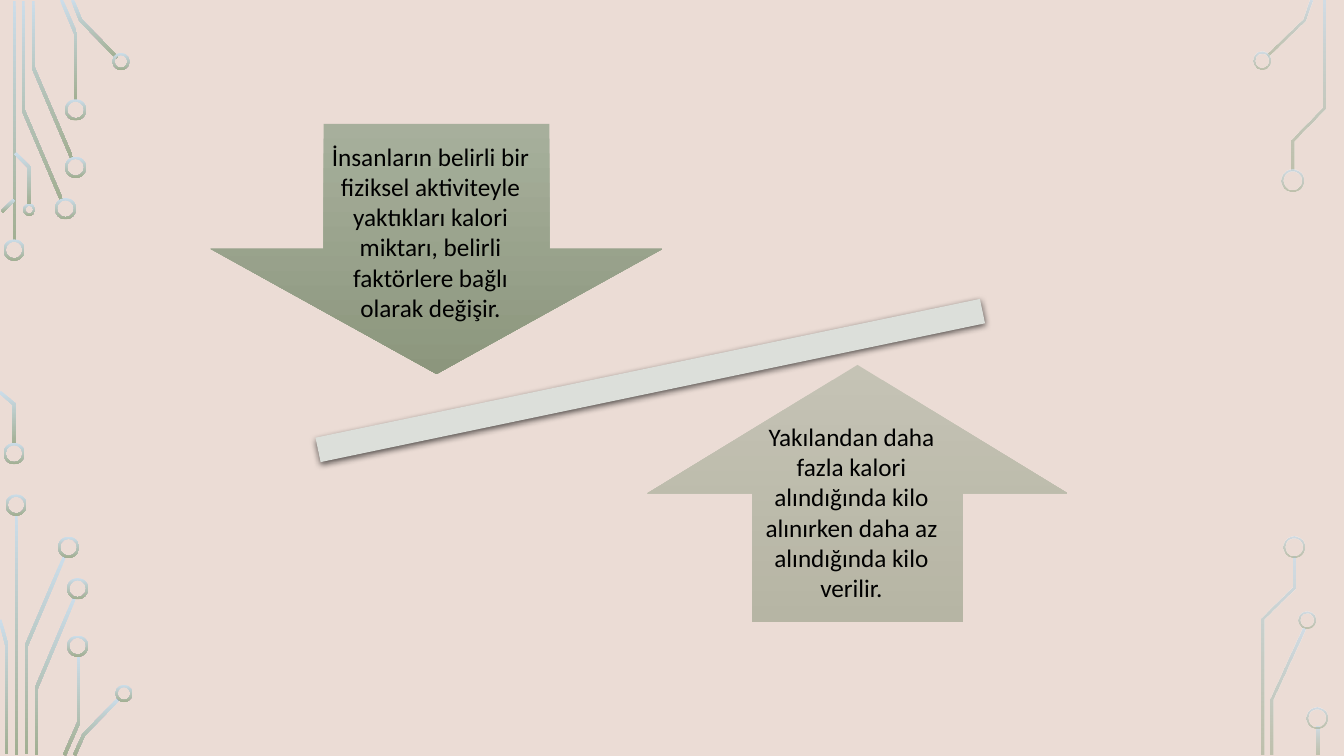
from math import hypot

from lxml import etree
from pptx import Presentation
from pptx.dml.color import RGBColor
from pptx.enum.shapes import MSO_SHAPE
from pptx.enum.text import MSO_AUTO_SIZE, PP_ALIGN
from pptx.oxml.ns import qn
from pptx.util import Inches, Pt

DONUT, MINUS = MSO_SHAPE.DONUT, MSO_SHAPE.MATH_MINUS
DOWN, UP = MSO_SHAPE.DOWN_ARROW, MSO_SHAPE.UP_ARROW
CENTER, FIT_SHAPE = PP_ALIGN.CENTER, MSO_AUTO_SIZE.SHAPE_TO_FIT_TEXT

# Content: box is left, top, width, height
ARROWS = [
    (DOWN, (2.09, 1.23, 4.48, 2.48), 90),
    (UP, (6.42, 3.62, 4.17, 2.55), 50),
]
TEXTS = [
    ("Yakılandan daha fazla kalori alındığında kilo alınırken daha az "
     "alındığında kilo verilir.", (7.35, 4.13, 2.19, 1.92)),
    ("İnsanların belirli bir fiziksel aktiviteyle yaktıkları kalori miktarı, "
     "belirli faktörlere bağlı olarak değişir.", (3.18, 1.35, 2.18, 1.92)),
]
BEAM_BOX, BEAM_ROTATION = (1.87, 3.25, 9.16, 1.05), 348.2

# Circuit decoration: centre lines of traces, then rings as centre x, y, diameter
LEFT_TRACES = [
    [(0.14, 0.01), (0.14, 2.4)],
    [(0.23, 0.01), (0.23, 1.09), (0.61, 1.98)],
    [(0.33, 0.01), (0.33, 0.67), (0.71, 1.56)],
    [(0.61, 0), (0.75, 0.33), (0.75, 1)],
    [(0.72, 0), (0.8, 0.2), (1.16, 0.57)],
    [(0.02, 2.1), (0.14, 1.98)],
    [(0, 3.89), (0.14, 4.01), (0.14, 4.41)],
    [(0.15, 1.52), (0.29, 1.66), (0.29, 2.03)],
    [(0.16, 5.1), (0.16, 7.49)],
    [(0.26, 7.48), (0.26, 6.41), (0.64, 5.52)],
    [(0, 6.15), (0.07, 6.41), (0.07, 7.48)],
    [(0.36, 7.49), (0.36, 6.83), (0.74, 5.93)],
    [(0.64, 7.49), (0.78, 7.17), (0.78, 6.5)],
    [(0.74, 7.49), (0.83, 7.29), (1.18, 6.93)],
]
LEFT_RINGS = [
    (0.14, 2.48, 0.21), (0.14, 4.5, 0.21), (0.65, 2.07, 0.21),
    (0.75, 1.66, 0.21), (0.75, 1.09, 0.21), (1.2, 0.61, 0.17),
    (0.29, 2.08, 0.12), (0.16, 5.01, 0.21), (0.68, 5.43, 0.21),
    (0.77, 5.84, 0.21), (0.77, 6.41, 0.21), (1.23, 6.88, 0.17),
]
RIGHT_TRACES = [
    [(12.57, 0.55), (12.93, 0.2), (13, 0)],
    [(12.62, 7.49), (12.62, 6.94), (12.93, 6.23)],
    [(12.82, 1.69), (12.82, 1.39), (13.13, 1.07), (13.13, 0.01)],
    [(12.53, 7.49), (12.53, 6.14), (12.83, 5.83), (12.83, 5.52)],
    [(13.07, 7.21), (13.07, 7.49)],
]
RIGHT_RINGS = [
    (12.52, 0.6, 0.17), (12.82, 1.79, 0.21), (12.96, 6.15, 0.17),
    (12.83, 5.43, 0.21), (13.06, 7.12, 0.21),
]
CIRCUITS = [
    (LEFT_TRACES, LEFT_RINGS, (100, 100)),
    (RIGHT_TRACES, RIGHT_RINGS, (80, 60)),
]
TRACE_WIDTH, RING_WIDTH = 0.03, 0.02

THEME = {
    "background": "EBDCD5", "circuit": ("CCDDEA", "A2AF92"),
    "arrow": ("A0AB96", "828F74"), "beam": "DCDFDA",
    "text": "000000", "font": "Calibri", "size": 18,
}


def color(name):
    return RGBColor.from_string(name)


def inches(values):
    return [Inches(value) for value in values]


def add_alpha(color_element, percent):
    alpha = etree.SubElement(color_element, qn("a:alpha"))
    alpha.set("val", str(percent * 1000))


def paint_gradient(shape, colors, opacities):
    shape.shadow.inherit = False
    shape.line.fill.background()
    shape.fill.gradient()
    shape.fill.gradient_angle = 270
    for stop, name in zip(shape.fill.gradient_stops, colors):
        stop.color.rgb = color(name)
    color_elements = list(shape._element.spPr.iter(qn("a:srgbClr")))
    for element, percent in zip(color_elements, opacities):
        if percent < 100:
            add_alpha(element, percent)


def ribbon_outline(points, width):
    """Widen a centre line into a strip with mitred corners."""
    normals = []
    for (x1, y1), (x2, y2) in zip(points, points[1:]):
        length = hypot(x2 - x1, y2 - y1)
        normals.append(((y1 - y2) / length, (x2 - x1) / length))
    left, right = [], []
    corners = zip(points, normals[:1] + normals, normals + normals[-1:])
    for (x, y), (ax, ay), (bx, by) in corners:
        reach = width / 2 / (1 + ax * bx + ay * by)
        dx, dy = (ax + bx) * reach, (ay + by) * reach
        left.append(inches((x + dx, y + dy)))
        right.append(inches((x - dx, y - dy)))
    return left + right[::-1]


def add_trace(slide, points, opacities):
    outline = ribbon_outline(points, TRACE_WIDTH)
    builder = slide.shapes.build_freeform(*outline[0])
    builder.add_line_segments(outline[1:], close=True)
    paint_gradient(builder.convert_to_shape(), THEME["circuit"], opacities)


def add_ring(slide, x, y, diameter, opacities):
    box = (x - diameter / 2, y - diameter / 2, diameter, diameter)
    ring = slide.shapes.add_shape(DONUT, *inches(box))
    ring.adjustments[0] = RING_WIDTH / diameter
    paint_gradient(ring, THEME["circuit"], opacities)


def add_beam(slide):
    beam = slide.shapes.add_shape(MINUS, *inches(BEAM_BOX))
    beam.rotation = BEAM_ROTATION
    beam.fill.solid()
    beam.fill.fore_color.rgb = color(THEME["beam"])
    beam.line.fill.background()
    beam.shadow.inherit = False
    effects = beam._element.spPr.find(qn("a:effectLst"))
    shadow = etree.SubElement(
        effects, qn("a:outerShdw"), blurRad=str(Pt(4.5)), dist=str(Pt(1.5)),
        dir="5400000", rotWithShape="0")
    add_alpha(etree.SubElement(shadow, qn("a:srgbClr"), val="000000"), 63)


def add_text(slide, text, box):
    frame = slide.shapes.add_textbox(*inches(box)).text_frame
    frame.word_wrap = True
    frame.auto_size = FIT_SHAPE
    paragraph = frame.paragraphs[0]
    paragraph.text = text
    paragraph.alignment = CENTER
    paragraph.font.name = THEME["font"]
    paragraph.font.size = Pt(THEME["size"])
    paragraph.font.color.rgb = color(THEME["text"])


def main():
    presentation = Presentation()
    presentation.slide_width = Inches(13.33)
    presentation.slide_height = Inches(7.5)
    slide = presentation.slides.add_slide(presentation.slide_layouts[6])
    slide.background.fill.solid()
    slide.background.fill.fore_color.rgb = color(THEME["background"])

    # Circuit decoration on both edges
    for traces, rings, opacities in CIRCUITS:
        for points in traces:
            add_trace(slide, points, opacities)
        for ring in rings:
            add_ring(slide, *ring, opacities)

    # Balance beam, arrows and their texts
    add_beam(slide)
    for kind, box, opacity in ARROWS:
        arrow = slide.shapes.add_shape(kind, *inches(box))
        paint_gradient(arrow, THEME["arrow"], (opacity, opacity))
    for text, box in TEXTS:
        add_text(slide, text, box)

    presentation.save("out.pptx")


if __name__ == "__main__":
    main()
